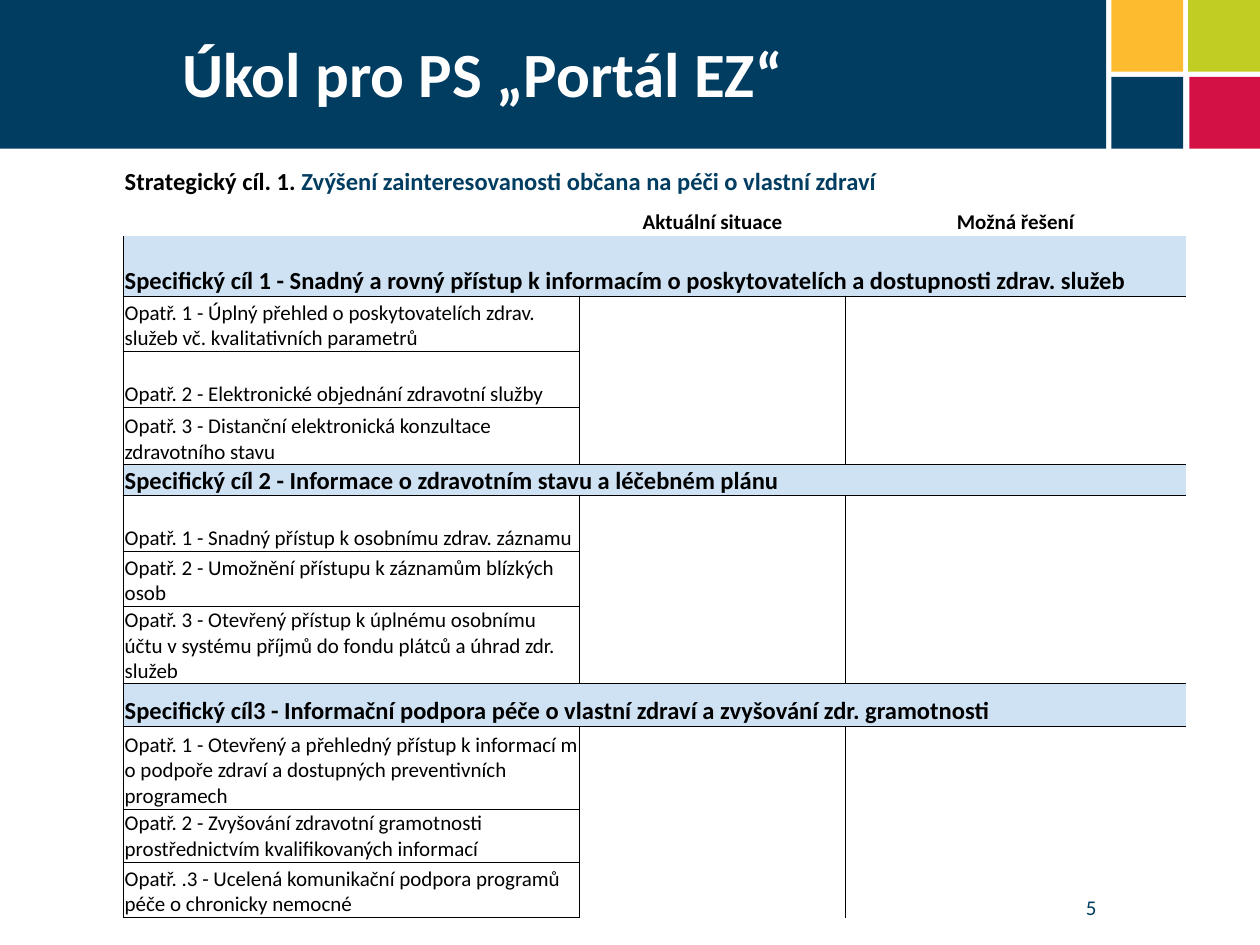
from lxml import etree
from pptx import Presentation
from pptx import util as u
from pptx.dml.color import RGBColor
from pptx.enum import shapes, text
from pptx.oxml.ns import qn

NAVY = RGBColor(0x00, 0x3D, 0x61)
RED = RGBColor(0xD3, 0x11, 0x45)
GREEN = RGBColor(0xC2, 0xCD, 0x23)
YELLOW = RGBColor(0xFD, 0xBB, 0x30)
PALE_BLUE = RGBColor(0xCF, 0xE2, 0xF3)
WHITE = RGBColor(0xFF, 0xFF, 0xFF)
BLACK = RGBColor(0, 0, 0)
FONT = "Calibri"
NO_STYLE = "{2D5ABB26-0587-4C30-8999-92F81FD0307C}"

# Content: goals with the row height, each followed by its measures
TITLE = "Úkol pro PS „Portál EZ“"
PAGE_NUMBER = "5"
STRATEGY = [("Strategický cíl. 1.", BLACK),
            (" Zvýšení zainteresovanosti občana na péči o vlastní zdraví", NAVY)]
HEADINGS = ["Aktuální situace", "Možná řešení"]
GOALS = [
    ("Specifický cíl 1 - Snadný a rovný přístup k informacím o poskytovatelích a dostupnosti zdrav. služeb", 0.48, [
        ("Opatř. 1 - Úplný přehled o poskytovatelích zdrav. služeb vč. kvalitativních parametrů", 0.44),
        ("Opatř. 2 - Elektronické objednání zdravotní služby", 0.44),
        ("Opatř. 3 - Distanční elektronická konzultace zdravotního stavu", 0.46)]),
    ("Specifický cíl 2 - Informace o zdravotním stavu a léčebném plánu", 0.24, [
        ("Opatř. 1 - Snadný přístup k osobnímu zdrav. záznamu", 0.44),
        ("Opatř. 2 - Umožnění přístupu k záznamům blízkých osob", 0.44),
        ("Opatř. 3 - Otevřený přístup k úplnému osobnímu účtu v systému příjmů do fondu plátců a úhrad zdr. služeb", 0.61)]),
    ("Specifický cíl3 - Informační podpora péče o vlastní zdraví a zvyšování zdr. gramotnosti", 0.34, [
        ("Opatř. 1 - Otevřený a přehledný přístup k informací m o podpoře zdraví a dostupných preventivních programech", 0.66),
        ("Opatř. 2 - Zvyšování zdravotní gramotnosti prostřednictvím kvalifikovaných informací", 0.42),
        ("Opatř. .3 - Ucelená komunikační podpora programů péče o chronicky nemocné", 0.44)]),
]
COLUMNS = [3.62, 2.11, 2.7]
HEAD_ROWS = [0.33, 0.3]
TILES = [(9.44, 0.61, RED), (9.43, 0, GREEN), (8.82, 0.61, NAVY), (8.82, 0, YELLOW)]


def add_block(page, left, top, width, height, color):
    block = page.shapes.add_shape(shapes.MSO_SHAPE.RECTANGLE, *map(u.Inches, (left, top, width, height)))
    block.shadow.inherit = False
    block.fill.solid()
    block.fill.fore_color.rgb = color
    block.line.fill.background()


def add_run(para, words, size, color, bold=False):
    span = para.add_run()
    span.text = words
    span.font.name = FONT
    span.font.size = u.Pt(size)
    span.font.bold = bold
    span.font.color.rgb = color


def add_text(page, area, words, size, color, anchor, align, bold=False):
    box = page.shapes.add_textbox(*map(u.Inches, area))
    box.text_frame.word_wrap = True
    box.text_frame.vertical_anchor = anchor
    para = box.text_frame.paragraphs[0]
    para.alignment = align
    add_run(para, words, size, color, bold)


def set_borders(cell, **widths):
    props = cell._tc.get_or_add_tcPr()
    for side in "LRTB":
        if side in widths:
            line = etree.SubElement(props, qn("a:ln" + side), w=str(u.Pt(widths[side])))
            fill = etree.SubElement(line, qn("a:solidFill"))
            etree.SubElement(fill, qn("a:srgbClr"), val=str(BLACK))


def fill_cell(cell, runs, size, bold=False, align=text.PP_ALIGN.LEFT):
    para = cell.text_frame.paragraphs[0]
    para.alignment = align
    for words, color in runs:
        add_run(para, words, size, color, bold)


def build_table(page):
    heights = HEAD_ROWS + [h for _, goal_height, measures in GOALS
                           for h in [goal_height] + [m[1] for m in measures]]
    frame = page.shapes.add_table(len(heights), len(COLUMNS), u.Inches(0.98), u.Inches(1.23),
                                  u.Inches(sum(COLUMNS)), u.Inches(sum(heights)))
    table = frame.table
    table.first_row = table.horz_banding = False
    table._tbl.tblPr.find(qn("a:tableStyleId")).text = NO_STYLE
    for column, width in zip(table.columns, COLUMNS):
        column.width = u.Inches(width)
    for row, height in zip(table.rows, heights):
        row.height = u.Inches(height)
    for cell in table.iter_cells():
        cell.margin_left = cell.margin_right = cell.margin_top = u.Inches(0.01)
        cell.margin_bottom = 0
        cell.vertical_anchor = text.MSO_ANCHOR.BOTTOM

    # Strategic goal and column headings
    table.cell(0, 0).merge(table.cell(0, 2))
    fill_cell(table.cell(0, 0), STRATEGY, 14, True)
    for column, heading in enumerate(HEADINGS, 1):
        fill_cell(table.cell(1, column), [(heading, BLACK)], 12, True, text.PP_ALIGN.CENTER)

    # Goal bands with their measures
    row = len(HEAD_ROWS)
    for goal, _, measures in GOALS:
        band = table.cell(row, 0)
        band.merge(table.cell(row, 2))
        set_borders(band, L=1, B=0.5, **({"T": 0.5} if row > len(HEAD_ROWS) else {}))
        fill_cell(band, [(goal, BLACK)], 14, True)
        band.fill.solid()
        band.fill.fore_color.rgb = PALE_BLUE
        for row, (measure, _) in enumerate(measures, row + 1):
            set_borders(table.cell(row, 0), L=1, R=0.5, T=0.5, B=0.5)
            fill_cell(table.cell(row, 0), [(measure, BLACK)], 12)
            set_borders(table.cell(row, 1), L=0.5)
        row += 1
    for cell in table.iter_cells():
        if cell.fill.type is None:
            cell.fill.background()


def main():
    deck = Presentation()
    deck.slide_width, deck.slide_height = u.Inches(10), u.Inches(7.5)
    page = deck.slides.add_slide(deck.slide_layouts[6])

    # Header band and colour tiles
    add_block(page, 0, 0, 8.78, 1.18, NAVY)
    for left, top, color in TILES:
        add_block(page, left, top, 0.57, 0.57, color)

    add_text(page, (1.35, 0, 7.43, 1.15), TITLE, 36, WHITE,
             text.MSO_ANCHOR.MIDDLE, text.PP_ALIGN.LEFT, True)
    add_text(page, (6.79, 6.83, 2.01, 0.52), PAGE_NUMBER, 12, NAVY,
             text.MSO_ANCHOR.BOTTOM, text.PP_ALIGN.RIGHT)
    build_table(page)
    deck.save("out.pptx")


if __name__ == "__main__":
    main()
